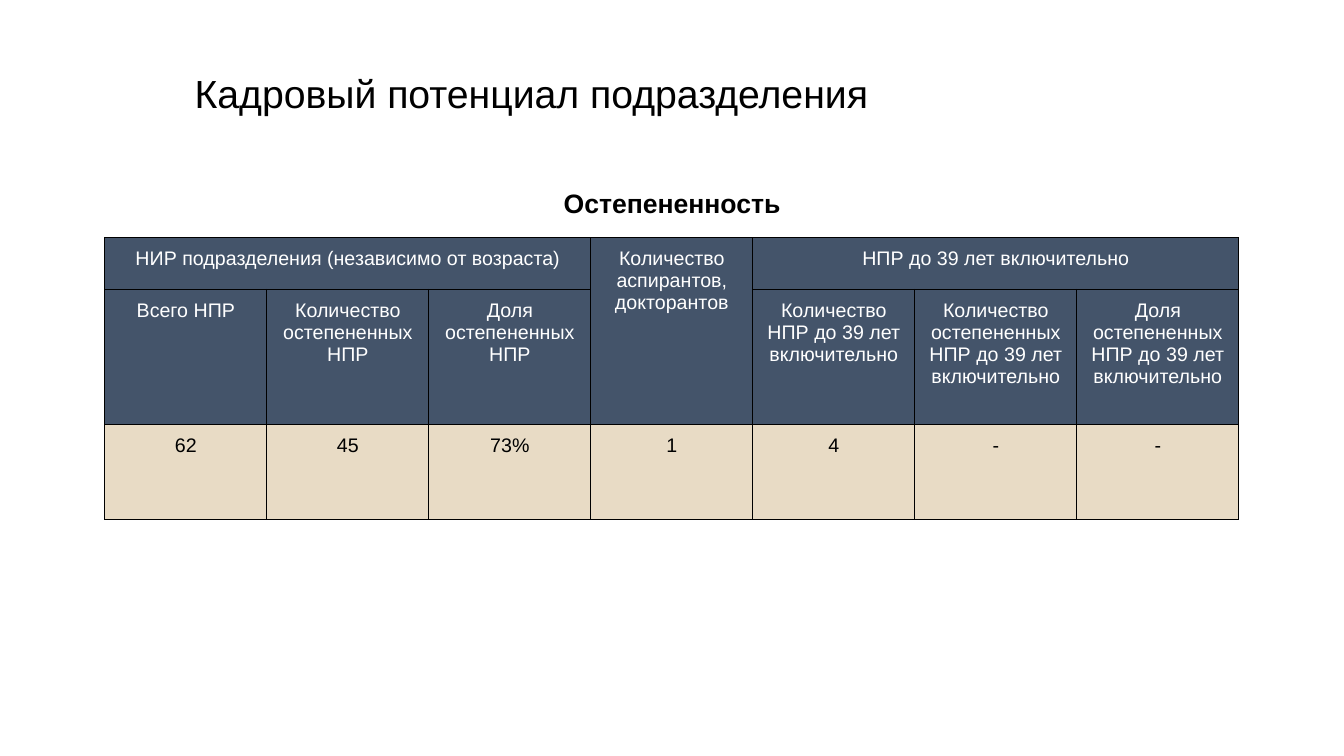
from lxml import etree
from pptx import Presentation, util as u
from pptx.dml.color import RGBColor
from pptx.enum import text
from pptx.oxml.ns import qn

BLACK = RGBColor(0x00, 0x00, 0x00)
WHITE = RGBColor(0xFF, 0xFF, 0xFF)
SLATE = RGBColor(0x44, 0x54, 0x6A)
SAND = RGBColor(0xE8, 0xDB, 0xC5)

COL_WIDTH = 1.607
ROW_HEIGHTS = [0.51, 1.34, 0.94]
HEADER_ROWS = 2
PAD = u.Inches(0.1)

# Empty strings are covered by merged cells
ROWS = [
    ["НИР подразделения (независимо от возраста)", "", "",
     "Количество аспирантов, докторантов",
     "НПР до 39 лет включительно", "", ""],
    ["Всего НПР", "Количество остепененных НПР", "Доля остепененных НПР", "",
     "Количество НПР до 39 лет включительно",
     "Количество остепененных НПР до 39 лет включительно",
     "Доля остепененных НПР до 39 лет включительно"],
    ["62", "45", "73%", "1", "4", "-", "-"],
]
MERGES = [((0, 0), (0, 2)), ((0, 3), (1, 3)), ((0, 4), (0, 6))]


def write(tf, words, size, color, align, bold=False):
    tf.text = words
    p = tf.paragraphs[0]
    p.alignment = align
    for r in p.runs:
        r.font.name = "Arial"
        r.font.size = u.Pt(size)
        r.font.bold = bold
        r.font.color.rgb = color


def add_borders(cell):
    tcPr = cell._tc.get_or_add_tcPr()
    for side in ("lnL", "lnR", "lnT", "lnB"):
        ln = etree.SubElement(tcPr, qn(f"a:{side}"), w=str(u.Pt(0.75)))
        fill = etree.SubElement(ln, qn("a:solidFill"))
        etree.SubElement(fill, qn("a:srgbClr"), val=str(BLACK))


prs = Presentation()
prs.slide_width, prs.slide_height = u.Inches(13.33), u.Inches(7.5)
s = prs.slides.add_slide(prs.slide_layouts[5])

# Title
title = s.shapes.title
title.left, title.top = u.Inches(1.83), u.Inches(0.64)
title.width, title.height = u.Inches(7.91), u.Inches(0.57)
tf = title.text_frame
tf.word_wrap = True
tf.auto_size = text.MSO_AUTO_SIZE.SHAPE_TO_FIT_TEXT
tf.vertical_anchor = text.MSO_ANCHOR.TOP
write(tf, "Кадровый потенциал подразделения", 28, BLACK, text.PP_ALIGN.LEFT)

# Table
columns = len(ROWS[0])
table = s.shapes.add_table(
    len(ROWS), columns, u.Inches(1.04), u.Inches(2.36),
    u.Inches(COL_WIDTH * columns), u.Inches(sum(ROW_HEIGHTS))).table
for col in table.columns:
    col.width = u.Inches(COL_WIDTH)
for row, height in zip(table.rows, ROW_HEIGHTS):
    row.height = u.Inches(height)
for first, last in MERGES:
    table.cell(*first).merge(table.cell(*last))

# Cells
for i, row in enumerate(ROWS):
    back, ink = (SLATE, WHITE) if i < HEADER_ROWS else (SAND, BLACK)
    for j, words in enumerate(row):
        cell = table.cell(i, j)
        cell.margin_left = cell.margin_right = PAD
        cell.margin_top = cell.margin_bottom = PAD
        add_borders(cell)
        cell.fill.solid()
        cell.fill.fore_color.rgb = back
        if words:
            write(cell.text_frame, words, 14, ink, text.PP_ALIGN.CENTER)

# Table heading
sp = s.shapes.add_textbox(u.Inches(4.49), u.Inches(1.75),
                          u.Inches(4.35), u.Inches(0.52))
tf = sp.text_frame
tf.word_wrap = True
tf.auto_size = text.MSO_AUTO_SIZE.SHAPE_TO_FIT_TEXT
tf.margin_left = tf.margin_right = tf.margin_top = tf.margin_bottom = PAD
write(tf, "Остепененность", 19, BLACK, text.PP_ALIGN.CENTER, bold=True)

prs.save("out.pptx")
